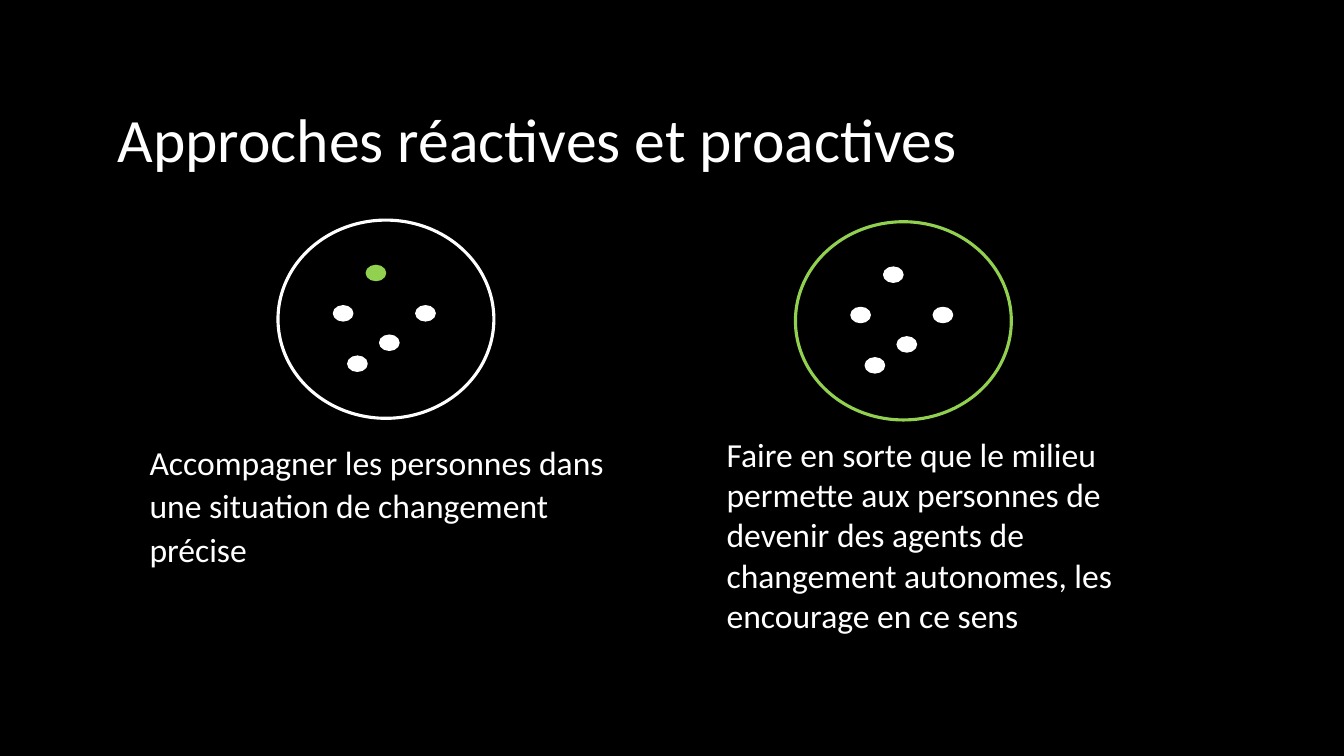
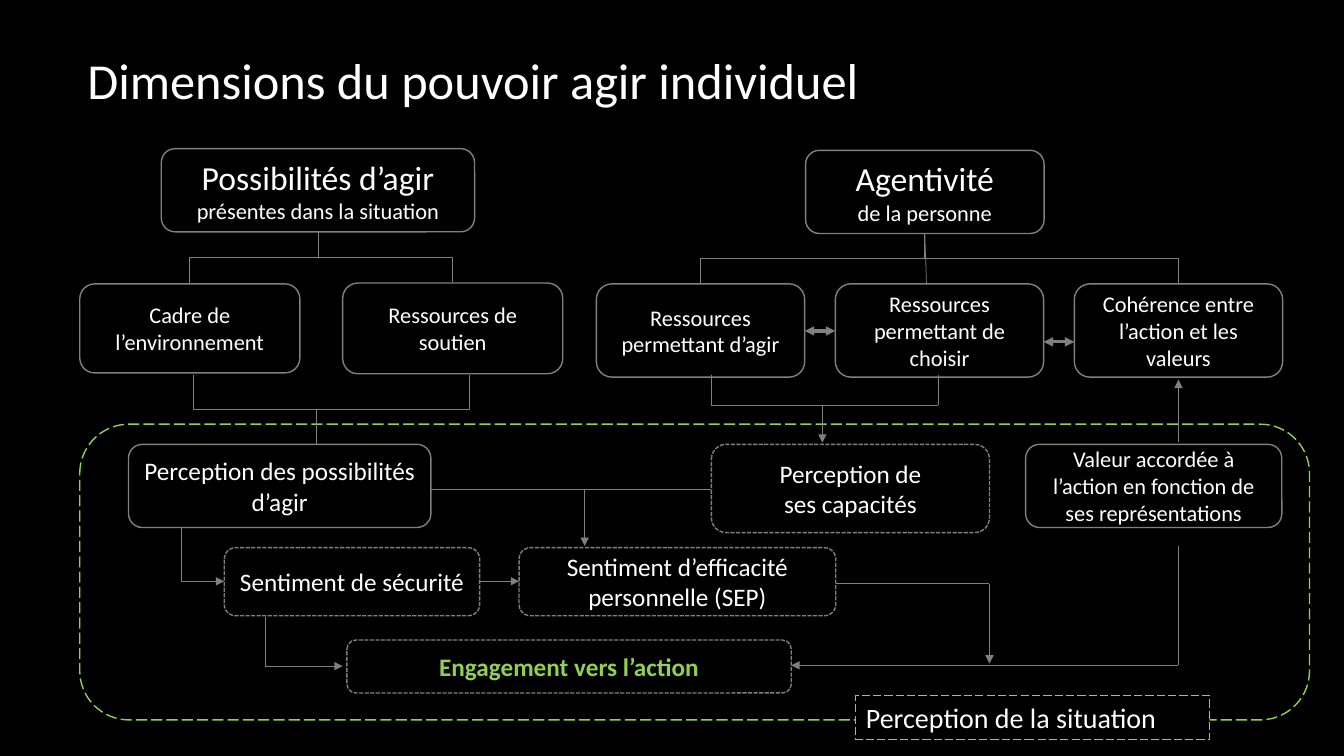
from dataclasses import dataclass

import lxml.etree
import pptx
import pptx.dml.color
import pptx.enum.dml
import pptx.enum.shapes
import pptx.enum.text
import pptx.oxml.ns
import pptx.util

SHAPE = pptx.enum.shapes.MSO_SHAPE
CONNECTOR = pptx.enum.shapes.MSO_CONNECTOR
DASH = pptx.enum.dml.MSO_LINE
ALIGN = pptx.enum.text.PP_ALIGN
ANCHOR = pptx.enum.text.MSO_ANCHOR
qn = pptx.oxml.ns.qn

COLS, ROWS = 160, 90  # square grid cells of a 16:9 slide
CELL = pptx.util.Inches(7.5) / ROWS


@dataclass(frozen=True)
class Theme:
    font: str = "Calibri"
    black: str = "000000"
    white: str = "FFFFFF"
    grey: str = "808080"
    green: str = "92D050"
    title: int = 44
    diagram_title: int = 36
    body: int = 24
    label: int = 20
    step: int = 18
    small: int = 16
    thick: float = 2.25
    outline: float = 1
    frame: float = 0.75
    thin: float = 0.5


T = Theme()


@dataclass(frozen=True)
class Box:
    """A rectangle in grid columns and rows."""
    x: float
    y: float
    w: float
    h: float

    @property
    def cx(self):
        return self.x + self.w / 2

    @property
    def right(self):
        return self.x + self.w

    @property
    def top_mid(self):
        return self.cx, self.y

    @property
    def bottom_mid(self):
        return self.cx, self.y + self.h

    def emu(self):
        return [grid(v) for v in (self.x, self.y, self.w, self.h)]


def grid(cells):
    return pptx.util.Emu(round(cells * CELL))


def rgb(color):
    return pptx.dml.color.RGBColor.from_string(color)


def add_run(p, text, size, color=T.white, bold=False):
    r = p.add_run()
    r.text = text
    r.font.name = T.font
    r.font.size = pptx.util.Pt(size)
    r.font.bold = bold
    r.font.color.rgb = rgb(color)


def fill_placeholder(sp, box, text, size, spacing=1.0):
    """Move a title or body placeholder and give it one plain paragraph."""
    sp.left, sp.top, sp.width, sp.height = box.emu()
    tf = sp.text_frame
    tf.word_wrap = True
    tf.auto_size = pptx.enum.text.MSO_AUTO_SIZE.NONE
    tf.vertical_anchor = ANCHOR.TOP
    p = tf.paragraphs[0]
    p.alignment = ALIGN.LEFT
    p.line_spacing = spacing
    p.space_before = pptx.util.Pt(0)
    pPr = p._p.get_or_add_pPr()
    pPr.set("marL", "0")
    pPr.set("indent", "0")
    lxml.etree.SubElement(pPr, qn("a:buNone"))
    add_run(p, text, size)


def add_outline(s, kind, box, color, width=T.outline, dash=None, fill=None):
    sp = s.shapes.add_shape(kind, *box.emu())
    sp.shadow.inherit = False
    if fill:
        sp.fill.solid()
        sp.fill.fore_color.rgb = rgb(fill)
    else:
        sp.fill.background()
    sp.line.color.rgb = rgb(color)
    sp.line.width = pptx.util.Pt(width)
    if dash:
        sp.line.dash_style = dash
    return sp


def write_lines(sp, lines, align=ALIGN.CENTER, anchor=ANCHOR.MIDDLE):
    """Write one paragraph per (text, size, ...) entry."""
    tf = sp.text_frame
    tf.word_wrap = True
    tf.vertical_anchor = anchor
    for i, line in enumerate(lines):
        p = tf.add_paragraph() if i else tf.paragraphs[0]
        p.alignment = align
        add_run(p, *line)


def add_node(s, box, *lines, felt=False):
    """Rounded box; a felt perception is black with a dashed outline."""
    style = dict(dash=DASH.SQUARE_DOT, fill=T.black) if felt else {}
    sp = add_outline(s, SHAPE.ROUNDED_RECTANGLE, box, T.grey, **style)
    if felt:
        sp.line._ln.find(qn("a:prstDash")).set("val", "sysDash")
    write_lines(sp, lines)


def add_link(s, start, end, kind=CONNECTOR.STRAIGHT, width=T.thin, ends=()):
    """Connector with arrowheads at the named ends (headEnd, tailEnd)."""
    c = s.shapes.add_connector(kind, *[grid(v) for v in (*start, *end)])
    c.line.color.rgb = rgb(T.grey)
    c.line.width = pptx.util.Pt(width)
    for name in ends:
        lxml.etree.SubElement(c.line._ln, qn(f"a:{name}")).set("type", "triangle")
    lxml.etree.SubElement(c.element.spPr, qn("a:effectLst"))
    return c


def add_route(s, *points, arrow=True):
    """Straight links through the points, with an arrowhead on the last."""
    last = len(points) - 2
    for i, (start, end) in enumerate(zip(points, points[1:])):
        add_link(s, start, end, ends=("tailEnd",) if arrow and i == last else ())


def add_branch(s, start, end):
    """Elbow that leaves downwards: a level elbow turned a quarter."""
    (x1, y1), (x2, y2) = start, end
    cx, cy = (x1 + x2) / 2, (y1 + y2) / 2
    half_w, half_h = (y2 - y1) / 2, (x1 - x2) / 2
    c = add_link(s, (cx - half_w, cy - half_h), (cx + half_w, cy + half_h),
                 CONNECTOR.ELBOW)
    c.element.spPr.find(qn("a:xfrm")).set("rot", str(90 * 60000))


def add_group_circle(s, x, y, ring, first_dot):
    """Circle of people, the first of whom may stand out."""
    add_outline(s, SHAPE.OVAL, Box(x, y, 25.7, 23.6), ring, T.thick)
    people = [(10.5, 5.4), (16.4, 10.2), (6.6, 10.2), (12.1, 13.7), (8.3, 16.2)]
    for i, (dx, dy) in enumerate(people):
        color = T.white if i else first_dot
        add_outline(s, SHAPE.OVAL, Box(x + dx, y + dy, 2.3, 1.8), color, fill=color)


def build_approaches(prs):
    s = prs.slides.add_slide(prs.slide_layouts.get_by_name("Two Content"))
    fill_placeholder(s.shapes.title, Box(12.8, 10.8, 139.7, 10.2),
                     "Approches réactives et proactives", T.title, 1.07)
    fill_placeholder(s.placeholders[1], Box(16.6, 51.7, 58.8, 16.4),
                     "Accompagner les personnes dans une situation de "
                     "changement précise", T.body, 1.07)
    fill_placeholder(s.placeholders[2], Box(85.3, 51, 53.3, 25.4),
                     "Faire en sorte que le milieu permette aux personnes de "
                     "devenir des agents de changement autonomes, les "
                     "encourage en ce sens", T.body)
    add_group_circle(s, 33.1, 26.2, T.white, T.green)
    add_group_circle(s, 94.7, 26.4, T.green, T.white)


def build_dimensions(prs):
    s = prs.slides.add_slide(prs.slide_layouts.get_by_name("Title Only"))
    fill_placeholder(s.shapes.title, Box(9.2, 5.3, 111.6, 8.5),
                     "Dimensions du pouvoir agir individuel", T.diagram_title)

    possibilities = Box(19.2, 17.7, 37.3, 9.9)
    agency = Box(95.9, 17.9, 28.4, 9.9)
    setting, support = Box(9.5, 33.8, 26.2, 10.6), Box(40.8, 33.7, 26.2, 10.8)
    act, choose, coherence = [Box(71 + 28.45 * i, 33.8, 24.8, 11.1)
                              for i in range(3)]
    seen = Box(15.3, 52.9, 36, 9.9)
    capacities = Box(84.7, 52.9, 33.1, 10.5)
    value = Box(122.1, 52.9, 30.5, 9.9)
    safety, efficacy = Box(26.7, 65.2, 30.4, 8.1), Box(61.8, 65.2, 37.7, 8.1)
    commitment = Box(41.3, 76.2, 52.9, 6.3)

    add_outline(s, SHAPE.ROUNDED_RECTANGLE, Box(9.5, 50.5, 146.4, 35.2),
                T.green, dash=DASH.LONG_DASH)
    label = add_outline(s, SHAPE.RECTANGLE, Box(101.9, 82.8, 42.1, 5.3),
                        T.green, T.frame, DASH.LONG_DASH, T.black)
    write_lines(label, [("Perception de la situation", T.label)],
                ALIGN.LEFT, ANCHOR.TOP)

    add_node(s, possibilities, ("Possibilités d’agir", T.body),
             ("présentes dans la situation", T.small))
    add_node(s, agency, ("Agentivité", T.body), ("de la personne", T.small))
    for box, text in [
        (setting, "Cadre de l’environnement"),
        (support, "Ressources de soutien"),
        (act, "Ressources permettant d’agir"),
        (choose, "Ressources permettant de choisir"),
        (coherence, "Cohérence entre l’action et les valeurs"),
        (value, "Valeur accordée à l’action en fonction de ses représentations"),
    ]:
        add_node(s, box, (text, T.small))
    add_node(s, seen, ("Perception des possibilités d’agir", T.step))
    add_node(s, capacities, ("Perception de", T.step), ("ses capacités", T.step),
             felt=True)
    add_node(s, safety, ("Sentiment de sécurité", T.step), felt=True)
    add_node(s, efficacy, ("Sentiment d’efficacité personnelle (SEP)", T.step),
             felt=True)
    add_node(s, commitment, ("Engagement vers l’action", T.step, T.green, True),
             felt=True)

    for parent, children in [(possibilities, (setting, support)),
                             (agency, (act, coherence))]:
        for child in children:
            add_branch(s, parent.bottom_mid, child.top_mid)
    add_link(s, agency.bottom_mid, (110.3, choose.y))
    for x in (23, 55.9):
        add_branch(s, (x, 44.6), (37.7, 52.9))
    for left, right, y in [(act, choose, 39.4), (choose, coherence, 40.7)]:
        add_link(s, (left.right, y), (right.x, y), width=T.thick,
                 ends=("headEnd", "tailEnd"))

    add_route(s, (84.7, 44.6), (84.7, 48.2), (111.7, 48.2), (111.7, 44.6),
              arrow=False)
    add_route(s, (97.9, 48.2), (97.9, 52.7))
    add_route(s, (coherence.cx, 52.6), (coherence.cx, 45.2))
    add_route(s, (seen.right, 58.2), (capacities.x, 58.2), arrow=False)
    add_route(s, (69.6, 58.2), (69.6, 65))
    add_link(s, (16.4, 62.8), (safety.x, 69.2), CONNECTOR.ELBOW,
             ends=("tailEnd",))
    add_route(s, (safety.right, 69.2), (efficacy.x, 69.2))
    add_route(s, (efficacy.right, 69.5), (117.8, 69.5), (117.8, 79))
    add_route(s, (coherence.cx, 65), (coherence.cx, 79.2),
              (commitment.right, 79.2))
    add_route(s, (31.6, 73.4), (31.6, 79.3), (40.8, 79.3))


def main():
    prs = pptx.Presentation()
    prs.slide_width, prs.slide_height = grid(COLS), grid(ROWS)
    background = prs.slide_master.background.fill
    background.solid()
    background.fore_color.rgb = rgb(T.black)
    build_approaches(prs)
    build_dimensions(prs)
    prs.save("out.pptx")


if __name__ == "__main__":
    main()
